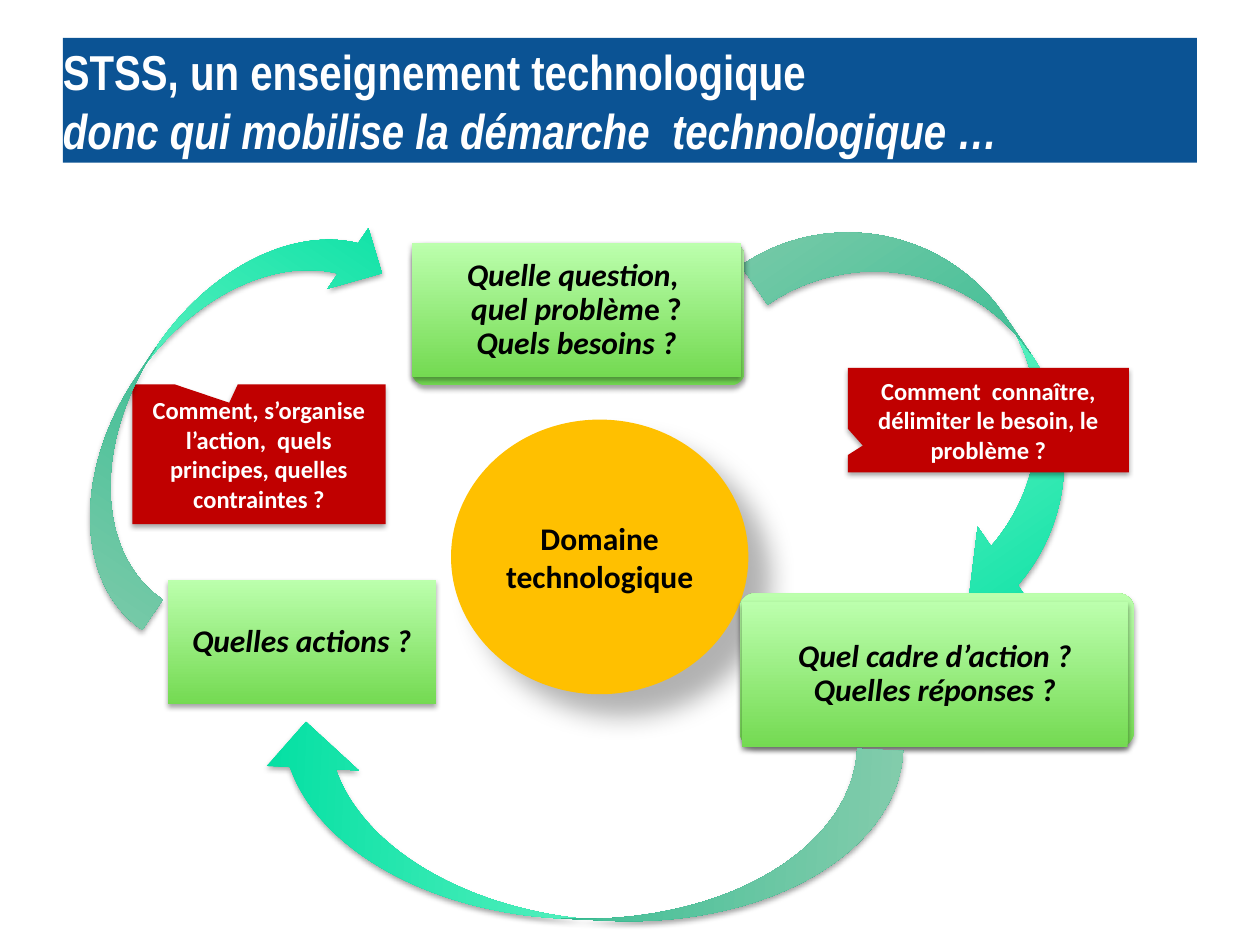
from dataclasses import dataclass
from typing import NamedTuple

from lxml.etree import SubElement
from pptx import Presentation
from pptx.dml.color import RGBColor
from pptx.enum.shapes import MSO_SHAPE as Preset
from pptx.enum.text import MSO_ANCHOR as Anchor, PP_ALIGN as Align
from pptx.oxml.ns import qn
from pptx.util import Inches, Pt

COLUMNS, ROWS = 100, 75
COLORS = {
    "banner": "0B5394",
    "question": "C00000",
    "domain": "FFC000",
    "white": "FFFFFF",
    "black": "000000",
}
GRADIENTS = {"step": ("74DA52", "BCFFAD"), "arrow": ("00DFA2", "A6FFD7")}


class Area(NamedTuple):
    column: float
    row: float
    columns: float
    rows: float


class Shadow(NamedTuple):
    opacity: int
    blur: float
    distance: float
    angle: int


class Span(NamedTuple):
    text: str
    italic: bool = False


class TextStyle(NamedTuple):
    size: int
    color: str
    font: str = "Calibri"
    align: Align = Align.CENTER
    inset_x: float = 0.07
    inset_y: float = 0.04
    spacing: float = 1.0


SOFT = Shadow(35, 3.1, 1.8, 90)
DEEP = Shadow(30, 15, 18, 45)
TITLE_TEXT = TextStyle(28, "white", "Arial Narrow", Align.LEFT, 0, 0)
STEP_TEXT = TextStyle(18, "black", inset_y=0.07, spacing=0.9)
QUESTION_TEXT = TextStyle(14, "white")
DOMAIN_TEXT = TextStyle(18, "black")


@dataclass
class Item:
    preset: Preset
    area: Area
    fill: str
    paragraphs: tuple[tuple[Span, ...], ...] = ()
    style: TextStyle | None = None
    shadow: Shadow | None = SOFT
    adjustments: tuple[float, ...] = ()
    rotation: float = 0


def arrow(area: Area, rotation: float) -> Item:
    return Item(Preset.CURVED_LEFT_ARROW, area, "arrow",
                adjustments=(0.25, 0.5, 0.25), rotation=rotation)


def backing(area: Area) -> Item:
    return Item(Preset.ROUNDED_RECTANGLE, area, "step", adjustments=(0.1,))


def step(area: Area, *paragraphs: tuple[Span, ...]) -> Item:
    return Item(Preset.RECTANGLE, area, "step", paragraphs, STEP_TEXT)


def question(area: Area, pointer: tuple[float, float], text: str) -> Item:
    return Item(Preset.RECTANGULAR_CALLOUT, area, "question", ((Span(text),),),
                QUESTION_TEXT, adjustments=pointer)


ITEMS = (
    Item(Preset.RECTANGLE, Area(5, 3, 90, 9.9), "banner",
         ((Span("STSS, un enseignement technologique \n"),
           Span("donc qui mobilise la démarche  technologique …", True)),),
         TITLE_TEXT, None),
    arrow(Area(67.6, 13.7, 15, 35.7), 325.5),
    backing(Area(32.7, 19.3, 26.4, 11.3)),
    step(Area(32.7, 19.3, 26.1, 10.6),
         (Span("Quelle question, \nquel problèm", True), Span("e ?")),
         (Span("Quels besoins ?", True),)),
    question(Area(67.3, 29.2, 22.3, 8.3), (-0.447, 0.243),
             "Comment  connaître, délimiter le besoin, le problème ?"),
    question(Area(10.5, 30.5, 20.1, 11.1), (-0.117, -0.368),
             "Comment, s’organise l’action,  quels principes, quelles contraintes ?"),
    Item(Preset.OVAL, Area(35.8, 33.3, 23.6, 21.8), "domain",
         ((Span("Domaine"),), (Span("technologique"),)), DOMAIN_TEXT, DEEP),
    step(Area(13.3, 46, 21.3, 9.9), (Span("Quelles actions ?", True),)),
    arrow(Area(11, 12.9, 11.6, 37), 213.9),
    backing(Area(58.7, 47.1, 31.3, 12.2)),
    step(Area(58.9, 47.8, 30.6, 11.5),
         (Span("Quel cadre d’action ?", True),),
         (Span("Quelles réponses ?", True),)),
    arrow(Area(38.5, 40.1, 14.6, 51.1), 92.8),
)


def paint(shape, fill: str) -> None:
    if fill in GRADIENTS:
        shape.fill.gradient()
        shape.fill.gradient_angle = 90
        for stop, position, color in zip(shape.fill.gradient_stops, (0, 1), GRADIENTS[fill]):
            stop.position = position
            stop.color.rgb = RGBColor.from_string(color)
    else:
        shape.fill.solid()
        shape.fill.fore_color.rgb = RGBColor.from_string(COLORS[fill])
    shape.line.fill.background()


def cast_shadow(shape, shadow: Shadow | None) -> None:
    shape.shadow.inherit = False
    if shadow is None:
        return
    effects = shape.element.spPr.find(qn("a:effectLst"))
    outer = SubElement(effects, qn("a:outerShdw"), blurRad=str(Pt(shadow.blur)),
                       dist=str(Pt(shadow.distance)), dir=str(shadow.angle * 60000),
                       algn="ctr", rotWithShape="0")
    color = SubElement(outer, qn("a:srgbClr"), val=COLORS["black"])
    SubElement(color, qn("a:alpha"), val=str(shadow.opacity * 1000))


def write(shape, paragraphs: tuple[tuple[Span, ...], ...], style: TextStyle) -> None:
    frame = shape.text_frame
    frame.word_wrap = True
    frame.vertical_anchor = Anchor.MIDDLE
    frame.margin_left = frame.margin_right = Inches(style.inset_x)
    frame.margin_top = frame.margin_bottom = Inches(style.inset_y)
    for index, spans in enumerate(paragraphs):
        para = frame.add_paragraph() if index else frame.paragraphs[0]
        para.alignment = style.align
        para.line_spacing = style.spacing
        for span in spans:
            for number, line in enumerate(span.text.split("\n")):
                if number:
                    para.add_line_break()
                if line:
                    run = para.add_run()
                    run.text = line
                    run.font.name = style.font
                    run.font.size = Pt(style.size)
                    run.font.bold = True
                    run.font.italic = span.italic
                    run.font.color.rgb = RGBColor.from_string(COLORS[style.color])


def draw(page, item: Item, column: float, row: float) -> None:
    area = item.area
    shape = page.shapes.add_shape(
        item.preset, round(area.column * column), round(area.row * row),
        round(area.columns * column), round(area.rows * row))
    shape.rotation = item.rotation
    for index, value in enumerate(item.adjustments):
        shape.adjustments[index] = value
    paint(shape, item.fill)
    cast_shadow(shape, item.shadow)
    if item.style:
        write(shape, item.paragraphs, item.style)


def main() -> None:
    deck = Presentation()
    deck.slide_width, deck.slide_height = Inches(10), Inches(7.5)
    page = deck.slides.add_slide(deck.slide_layouts[6])
    for item in ITEMS:
        draw(page, item, deck.slide_width / COLUMNS, deck.slide_height / ROWS)
    deck.save("out.pptx")


if __name__ == "__main__":
    main()
